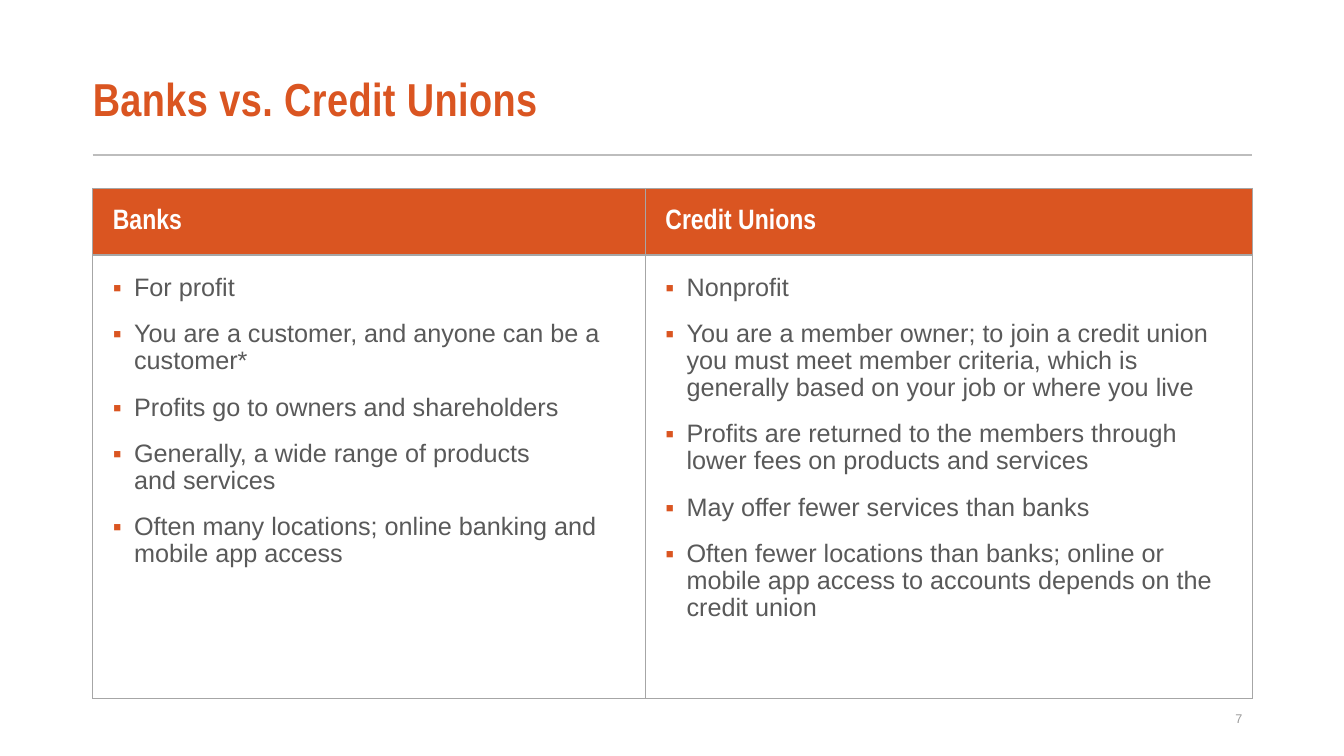
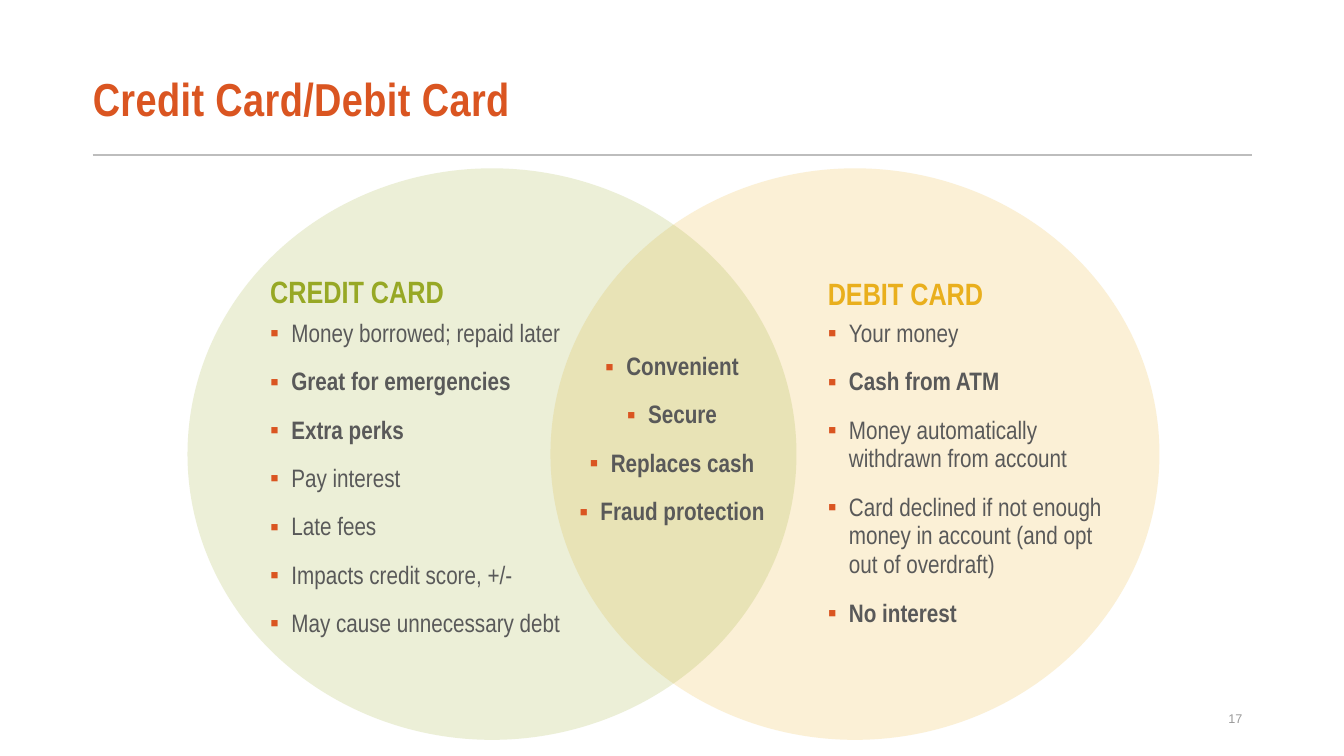
from lxml import etree
from pptx import Presentation
from pptx import util as u
from pptx.dml.color import RGBColor
from pptx.enum import shapes, text
from pptx.oxml import ns

ORANGE, GREEN, GOLD = "DA5521", "97A825", "E9AF1D"
GREY, RULE, EDGE, PALE, WHITE = "595959", "BDBDBD", "A6A6A6", "9A9A9A", "FFFFFF"
SANS, SLIM = "Arial", "Arial Narrow"
LEFT, WIDTH = 0.92, 11.5


def color(code):
    return RGBColor.from_string(code)


def node(parent, tag, **attrs):
    return etree.SubElement(parent, ns.qn(tag), **attrs)


def paint(shape, code):
    shape.fill.solid()
    shape.fill.fore_color.rgb = color(code)


def place(shape, box):
    shape.left, shape.top, shape.width, shape.height = map(u.Inches, box)


def setup(frame, pads=(0.1, 0.05, 0.1, 0.05), anchor=text.MSO_ANCHOR.TOP):
    frame.word_wrap = True
    frame.auto_size = text.MSO_AUTO_SIZE.NONE
    frame.vertical_anchor = anchor
    (frame.margin_left, frame.margin_top,
     frame.margin_right, frame.margin_bottom) = map(u.Inches, pads)
    return frame


def write(par, words, font, size, code, bold=False):
    for num, part in enumerate(words.split("\n")):
        if num:
            par.add_line_break()
        run = par.add_run()
        run.text = part
        run.font.name, run.font.size = font, u.Pt(size)
        run.font.bold, run.font.color.rgb = bold, color(code)
    return run


def line(par, space=1.0, align=text.PP_ALIGN.LEFT, before=0):
    par.alignment, par.line_spacing = align, space
    par.space_before = u.Pt(before)
    return par


def bullets(frame, items, font, bold=(), align=text.PP_ALIGN.LEFT):
    for num, item in enumerate(items):
        par = frame.add_paragraph() if num else frame.paragraphs[0]
        line(par, 0.95, align, 14 if num else 0)
        props = par._p.get_or_add_pPr()
        props.set("marL", str(u.Inches(0.21)))
        props.set("indent", str(u.Inches(-0.21)))
        node(node(props, "a:buClr"), "a:srgbClr", val=ORANGE)
        node(props, "a:buFont", typeface=SANS)
        node(props, "a:buChar", char="▪")
        write(par, item, font, 18, GREY, num in bold)


def base(deck, layout, title, page):
    slide = deck.slides.add_slide(deck.slide_layouts.get_by_name(layout))
    head = slide.shapes.title
    place(head, (LEFT, 0.54, WIDTH, 0.94))
    frame = setup(head.text_frame, (0, 0.05, 0.1, 0.05), text.MSO_ANCHOR.MIDDLE)
    run = write(line(frame.paragraphs[0], 0.87), title, SLIM, 33, ORANGE, True)
    run.font._element.set("spc", "30")
    rule = slide.shapes.add_connector(
        shapes.MSO_CONNECTOR.STRAIGHT,
        *map(u.Inches, (LEFT, 1.54, LEFT + WIDTH, 1.54)))
    rule.line.color.rgb, rule.line.width = color(RULE), u.Pt(1.5)
    node(rule.element.spPr, "a:effectLst")
    foot = slide.shapes.add_textbox(*map(u.Inches, (9.42, 6.93, 3, 0.4)))
    frame = setup(foot.text_frame, anchor=text.MSO_ANCHOR.MIDDLE)
    write(line(frame.paragraphs[0], align=text.PP_ALIGN.RIGHT), page, SANS, 9, PALE)
    return slide


def edges(cell):
    props = cell._tc.get_or_add_tcPr()
    for side in "LRTB":
        edge = node(props, "a:ln" + side, w=str(u.Pt(1)))
        node(node(edge, "a:solidFill"), "a:srgbClr", val=EDGE)


def style(cell, fill, top, anchor):
    edges(cell)
    paint(cell, fill)
    cell.vertical_anchor = anchor
    cell.margin_left, cell.margin_top = u.Inches(0.2), u.Inches(top)
    cell.margin_right, cell.margin_bottom = u.Inches(0.1), u.Inches(0.05)
    return cell.text_frame


def versus(slide, box, cols, rows, data):
    table = slide.shapes.add_table(2, len(cols), *map(u.Inches, box)).table
    for row, tall in zip(table.rows, rows):
        row.height = u.Inches(tall)
    for num, (wide, (head, items)) in enumerate(zip(cols, data)):
        table.columns[num].width = u.Inches(wide)
        frame = style(table.cell(0, num), ORANGE, 0.05, text.MSO_ANCHOR.MIDDLE)
        write(line(frame.paragraphs[0]), head, SLIM, 20, WHITE, True)
        frame = style(table.cell(1, num), WHITE, 0.2, text.MSO_ANCHOR.TOP)
        bullets(frame, items, SANS)


def oval(slide, box, code):
    disc = slide.shapes.add_shape(shapes.MSO_SHAPE.OVAL, *map(u.Inches, box))
    disc.shadow.inherit = False
    paint(disc, code)
    disc.line.fill.background()
    node(disc.element.find(".//" + ns.qn("a:srgbClr")), "a:alpha", val="18000")
    disc.element.getparent().insert(2, disc.element)


def card(slide, slot, box, code, head, space, items, bold):
    left, top, wide, tall = box
    label, body = (slide.placeholders[num] for num in (slot, slot + 1))
    place(label, (left, top, wide, 0.46))
    frame = setup(label.text_frame)
    write(line(frame.paragraphs[0], space), head, SLIM, 22, code, True)
    place(body, (left, top + 0.44, wide, tall - 0.44))
    bullets(setup(body.text_frame), items, SLIM, bold)


def venn(slide, box, shift, cards, shared):
    left, top, wide, tall = box
    for num, (code, *rest) in enumerate(cards):
        oval(slide, (left + num * shift, top, wide, tall), code)
        spot, size, *info = rest
        area = (left + spot, top + 1.01, *size)
        card(slide, 1 + 2 * num, area, code, *info)
    mid = slide.shapes.add_textbox(
        *map(u.Inches, (left + 3.39, top + 1.78, 2.83, 1.84)))
    bullets(setup(mid.text_frame), shared, SLIM, range(len(shared)),
            text.PP_ALIGN.CENTER)


def main():
    deck = Presentation()
    deck.slide_width, deck.slide_height = u.Inches(13.33), u.Inches(7.5)

    slide = base(deck, "Title Only", "Banks vs. Credit Unions", "7")
    versus(slide, (LEFT, 1.87, WIDTH, 5.06), (5.48, 6.02), (0.66, 4.4), [
        ("Banks", [
            "For profit",
            "You are a customer, and anyone can be a customer*",
            "Profits go to owners and shareholders",
            "Generally, a wide range of products \nand services",
            "Often many locations; online banking and mobile app access"]),
        ("Credit Unions", [
            "Nonprofit",
            "You are a member owner; to join a credit union you must meet "
            "member criteria, which is generally based on your job or where "
            "you live",
            "Profits are returned to the members through lower fees on "
            "products and services",
            "May offer fewer services than banks",
            "Often fewer locations than banks; online or mobile app access "
            "to accounts depends on the credit union"])])

    slide = base(deck, "Comparison", "Credit Card/Debit Card", "17")
    venn(slide, (1.86, 1.67, 6.04, 5.67), 3.6, [
        (GREEN, 0.72, (4.17, 3.73), "CREDIT CARD", 0.95, [
            "Money borrowed; repaid later",
            "Great for emergencies",
            "Extra perks",
            "Pay interest",
            "Late fees",
            "Impacts credit score, +/-",
            "May cause unnecessary debt"], (1, 2)),
        (GOLD, 6.25, (3, 3.63), "DEBIT CARD", 1.0, [
            "Your money",
            "Cash from ATM",
            "Money automatically withdrawn from account",
            "Card declined if not enough money in account (and opt out of "
            "overdraft)",
            "No interest"], (1, 4))],
        ["Convenient", "Secure", "Replaces cash", "Fraud protection"])

    deck.save("out.pptx")


if __name__ == "__main__":
    main()
